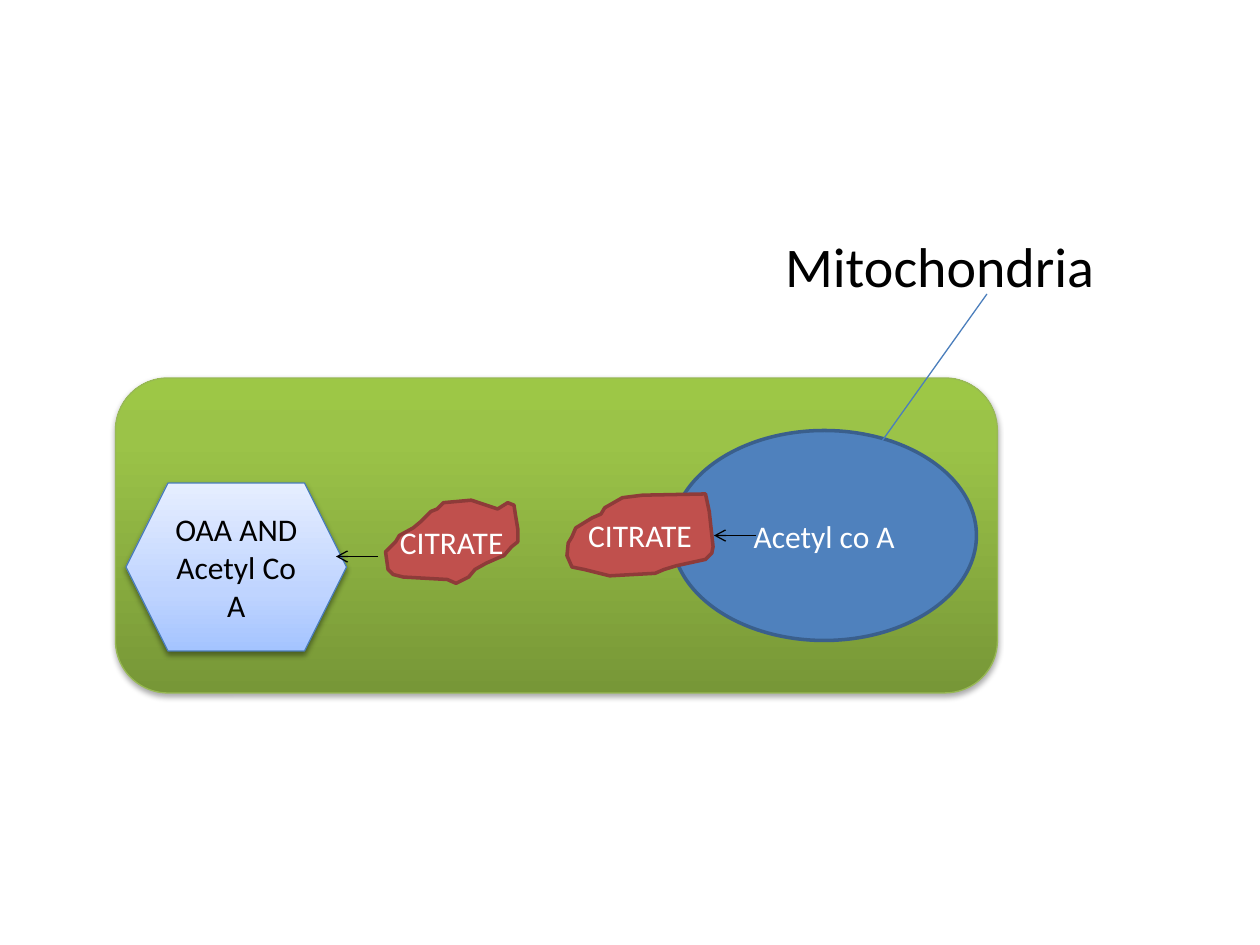
import copy
from dataclasses import dataclass

import lxml.etree
import pptx
import pptx.dml.color
import pptx.enum.shapes
import pptx.enum.text
import pptx.oxml
import pptx.oxml.ns
import pptx.util

SHAPES = pptx.enum.shapes.MSO_SHAPE
FONT = "Calibri"
CELL = pptx.util.Inches(1) // 12  # the slide is 120 columns by 90 rows
HUNDREDTH = pptx.util.Inches(1) / 100


@dataclass(frozen=True)
class Body:
    """A cell part; several fill colours form a gradient from bottom to top."""
    kind: SHAPES
    column: int
    row: int
    columns: int
    rows: int
    fill: tuple[tuple[int, str], ...]
    line: str
    line_width: float = 0.75
    shadow_opacity: int = 0
    text: str = ""
    text_colour: str = "FFFFFF"


@dataclass(frozen=True)
class Link:
    start: tuple[int, int]
    end: tuple[int, int]
    colour: str = "000000"
    arrow: bool = True


BODIES = {
    "cell": Body(SHAPES.ROUNDED_RECTANGLE, 11, 36, 84, 30,
                 ((0, "779737"), (80, "9BC348"), (100, "9DC746")), "98B955",
                 shadow_opacity=35),
    "mitochondrion": Body(SHAPES.OVAL, 64, 41, 29, 20, ((0, "4F81BD"),), "3A5F8C", 2,
                          text="Acetyl co A"),
    "products": Body(SHAPES.HEXAGON, 12, 46, 21, 16,
                     ((0, "A4C4FF"), (35, "BFD4FF"), (100, "E6EEFF")), "4B7EBC",
                     shadow_opacity=38, text="OAA AND Acetyl Co A", text_colour="000000"),
}

# Citrate outlines, in hundredths of an inch
INNER_CITRATE = (
    (560, 392), (510, 393), (494, 395), (480, 403), (477, 408), (470, 411), (457, 419),
    (454, 426), (451, 431), (450, 441), (454, 450), (464, 452), (484, 457), (520, 455),
    (527, 452), (537, 449), (560, 444), (565, 439), (566, 434), (563, 406),
)
OUTER_CITRATE = (
    (395, 404), (380, 399), (374, 397), (352, 399), (347, 404), (342, 406), (338, 410),
    (334, 414), (328, 419), (317, 425), (314, 430), (306, 438), (308, 452), (312, 456),
    (320, 458), (355, 460), (362, 463), (372, 458), (377, 452), (386, 447), (395, 443),
    (400, 441), (406, 434), (411, 430), (411, 420), (409, 408), (408, 401), (403, 399),
)


def rgb(colour: str) -> pptx.dml.color.RGBColor:
    return pptx.dml.color.RGBColor.from_string(colour)


def paint(shape, fill: tuple[tuple[int, str], ...], line: str, line_width: float) -> None:
    shape.shadow.inherit = False
    shape.line.color.rgb = rgb(line)
    shape.line.width = pptx.util.Pt(line_width)
    if len(fill) == 1:
        shape.fill.solid()
        shape.fill.fore_color.rgb = rgb(fill[0][1])
        return
    shape.fill.gradient()
    shape.fill.gradient_angle = 90
    stop_list = shape._element.spPr.find(".//" + pptx.oxml.ns.qn("a:gsLst"))
    while len(stop_list) < len(fill):
        stop_list.append(copy.deepcopy(stop_list[0]))
    for stop, (percent, colour) in zip(shape.fill.gradient_stops, fill):
        stop.position = percent / 100
        stop.color.rgb = rgb(colour)


def add_shadow(shape, opacity: int) -> None:
    effects = shape._element.spPr.find(pptx.oxml.ns.qn("a:effectLst"))
    effects.append(pptx.oxml.parse_xml(
        f'<a:outerShdw {pptx.oxml.ns.nsdecls("a")} blurRad="40000" dist="22000" '
        'dir="5400000" rotWithShape="0"><a:srgbClr val="000000">'
        f'<a:alpha val="{opacity * 1000}"/></a:srgbClr></a:outerShdw>'))


def write(shape, text: str, colour: str, size: int = 18) -> None:
    frame = shape.text_frame
    frame.word_wrap = True
    frame.vertical_anchor = pptx.enum.text.MSO_ANCHOR.MIDDLE
    paragraph = frame.paragraphs[0]
    paragraph.text = text
    paragraph.alignment = pptx.enum.text.PP_ALIGN.CENTER
    paragraph.font.name = FONT
    paragraph.font.size = pptx.util.Pt(size)
    paragraph.font.color.rgb = rgb(colour)


def add_body(slide, body: Body) -> None:
    shape = slide.shapes.add_shape(body.kind, body.column * CELL, body.row * CELL,
                                   body.columns * CELL, body.rows * CELL)
    paint(shape, body.fill, body.line, body.line_width)
    if body.shadow_opacity:
        add_shadow(shape, body.shadow_opacity)
    if body.text:
        write(shape, body.text, body.text_colour)


def add_citrate(slide, outline: tuple[tuple[int, int], ...]) -> None:
    builder = slide.shapes.build_freeform(*outline[0], scale=HUNDREDTH)
    builder.add_line_segments(outline[1:], close=True)
    shape = builder.convert_to_shape()
    paint(shape, ((0, "C0504D"),), "8E3B39", 2)
    write(shape, "CITRATE", "FFFFFF")


def add_link(slide, link: Link) -> None:
    connector = slide.shapes.add_connector(
        pptx.enum.shapes.MSO_CONNECTOR.STRAIGHT,
        *(position * CELL for position in link.start + link.end))
    connector.line.color.rgb = rgb(link.colour)
    connector.line.width = pptx.util.Pt(0.75)
    if link.arrow:
        lxml.etree.SubElement(connector.line._get_or_add_ln(),
                              pptx.oxml.ns.qn("a:tailEnd"), type="arrow")
    lxml.etree.SubElement(connector._element.spPr, pptx.oxml.ns.qn("a:effectLst"))


def main() -> None:
    presentation = pptx.Presentation()
    presentation.slide_width = 120 * CELL
    presentation.slide_height = 90 * CELL
    slide = presentation.slides.add_slide(presentation.slide_layouts[6])

    label = slide.shapes.add_textbox(int(72.5 * CELL), int(21.4 * CELL), 34 * CELL, int(7.7 * CELL))
    write(label, "Mitochondria", "000000", 32)

    add_body(slide, BODIES["cell"])
    add_body(slide, BODIES["mitochondrion"])
    add_citrate(slide, INNER_CITRATE)
    add_link(slide, Link((72, 51), (68, 51)))
    add_citrate(slide, OUTER_CITRATE)
    add_body(slide, BODIES["products"])
    add_link(slide, Link((36, 53), (32, 53)))
    add_link(slide, Link((84, 42), (94, 28), "4B7EBC", arrow=False))

    presentation.save("out.pptx")


if __name__ == "__main__":
    main()
